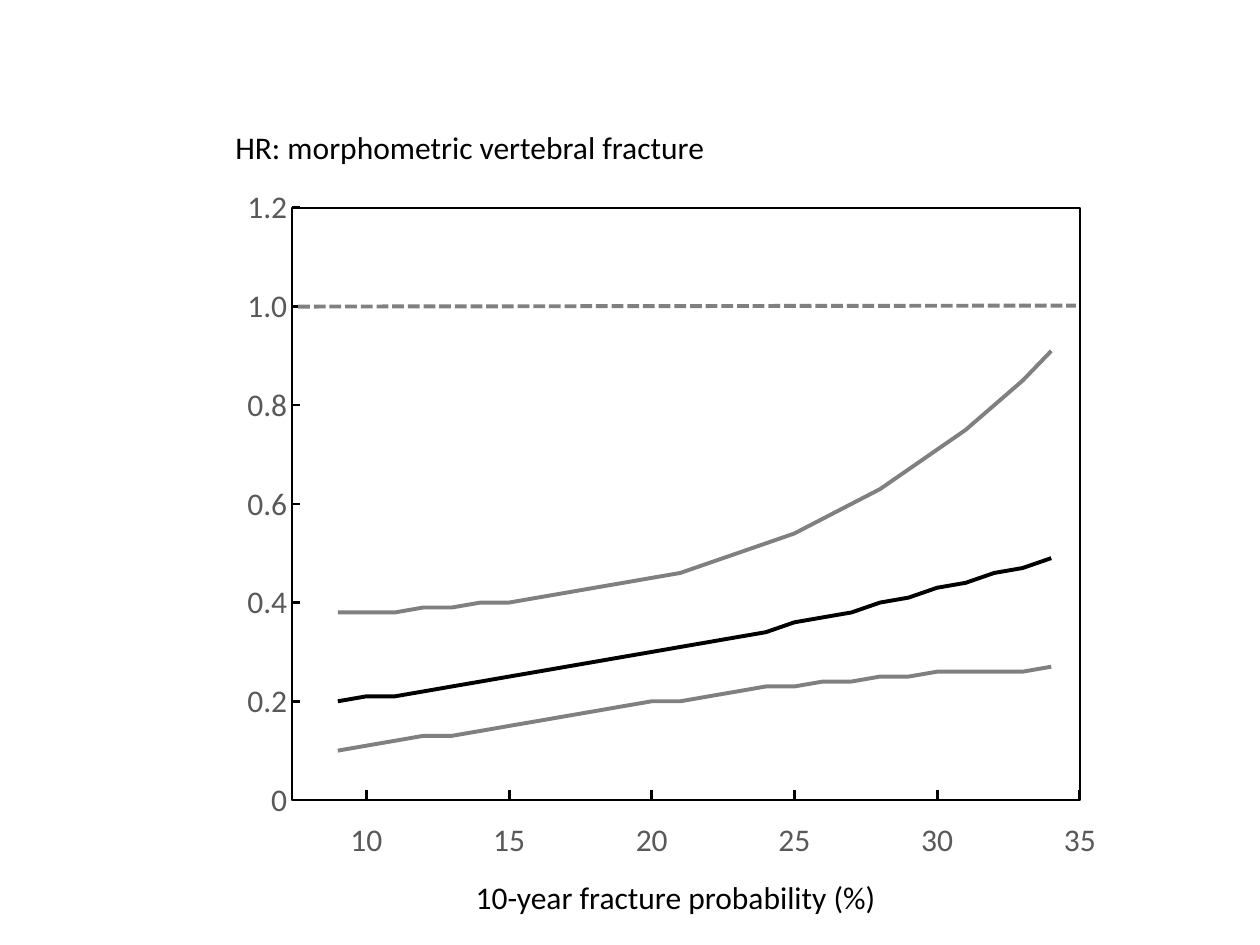
from dataclasses import dataclass

from pptx import Presentation
from pptx.chart.data import XyChartData
from pptx.dml.color import RGBColor as Rgb
from pptx.enum.chart import XL_CHART_TYPE as Kind, XL_MARKER_STYLE as Mark
from pptx.enum.chart import XL_TICK_LABEL_POSITION as Place, XL_TICK_MARK as Tick
from pptx.enum.dml import MSO_LINE as Dash
from pptx.enum.shapes import MSO_CONNECTOR as Link
from pptx.enum.text import MSO_ANCHOR as Anchor, MSO_AUTO_SIZE as Auto, PP_ALIGN as Align
from pptx.oxml import parse_xml
from pptx.oxml.ns import nsdecls, qn
from pptx.util import Cm, Pt


@dataclass(frozen=True)
class Theme:
    """Colours, font, type size and line widths."""
    ink: Rgb = Rgb(0, 0, 0)
    gray: Rgb = Rgb(0x80, 0x80, 0x80)
    label: Rgb = Rgb(0x59, 0x59, 0x59)
    font: str = "Calibri"
    size: Pt = Pt(18)
    edge: Pt = Pt(1.5)
    tick: Pt = Pt(1.75)
    curve: Pt = Pt(2.25)


@dataclass(frozen=True)
class Box:
    """A region in centimetres."""
    x: float
    y: float
    w: float
    h: float

    def cm(self):
        """Return the four lengths for python-pptx."""
        return Cm(self.x), Cm(self.y), Cm(self.w), Cm(self.h)


THEME = Theme()
X_MIN, X_MAX, Y_MAX = 7.4, 35, 1.2
FIRST = 9
CURVES = {
    "Hazard ratio": (THEME.ink, [
        .20, .21, .21, .22, .23, .24, .25, .26, .27, .28, .29, .30, .31,
        .32, .33, .34, .36, .37, .38, .40, .41, .43, .44, .46, .47, .49]),
    "Lower limit": (THEME.gray, [
        .10, .11, .12, .13, .13, .14, .15, .16, .17, .18, .19, .20, .20,
        .21, .22, .23, .23, .24, .24, .25, .25, .26, .26, .26, .26, .27]),
    "Upper limit": (THEME.gray, [
        .38, .38, .38, .39, .39, .40, .40, .41, .42, .43, .44, .45, .46,
        .48, .50, .52, .54, .57, .60, .63, .67, .71, .75, .80, .85, .91]),
}


def style(font, color):
    """Give a font the theme's face and size and a colour."""
    font.name, font.size, font.color.rgb = THEME.font, THEME.size, color


def write(shape, text, color, align, pad=True):
    """Put one formatted line of text into a shape."""
    frame = shape.text_frame
    frame.text = text
    frame.word_wrap = pad
    frame.auto_size = Auto.NONE
    frame.vertical_anchor = Anchor.TOP
    if not pad:
        frame.margin_left = frame.margin_right = 0
        frame.margin_top = frame.margin_bottom = 0
    line = frame.paragraphs[0]
    line.alignment = align
    style(line.runs[0].font, color)


def rule(slide, start, end, color, width, dash=None):
    """Draw a straight line between two points."""
    line = slide.shapes.add_connector(Link.STRAIGHT, *map(Cm, start + end))
    line.line.color.rgb, line.line.width = color, width
    if dash:
        line.line.dash_style = dash
    props = line._element.spPr
    props.append(parse_xml(f"<a:effectLst {nsdecls('a')}/>"))


def frame_plot(chart, outer, plot):
    """Fix the inner plot area and draw its border."""
    area = chart._chartSpace.chart.plotArea
    for old in area.findall(qn("c:layout")):
        area.remove(old)
    parts = {"x": (plot.x - outer.x) / outer.w, "y": (plot.y - outer.y) / outer.h,
             "w": plot.w / outer.w, "h": plot.h / outer.h}
    modes = "".join(f'<c:{k}Mode val="edge"/>' for k in "xy")
    sizes = "".join(f'<c:{k} val="{v:.5f}"/>' for k, v in parts.items())
    area.insert(0, parse_xml(
        f"<c:layout {nsdecls('c')}><c:manualLayout>"
        f'<c:layoutTarget val="inner"/>{modes}{sizes}'
        "</c:manualLayout></c:layout>"))
    area.append(parse_xml(
        f"<c:spPr {nsdecls('c', 'a')}><a:noFill/><a:ln w=\"{int(THEME.edge)}\">"
        f'<a:solidFill><a:srgbClr val="{THEME.ink}"/></a:solidFill>'
        "</a:ln></c:spPr>"))


def set_axis(axis, low, high, step):
    """Set the range and line of an axis."""
    axis.minimum_scale, axis.maximum_scale, axis.major_unit = low, high, step
    axis.has_major_gridlines = axis.has_title = False
    axis.minor_tick_mark = Tick.NONE
    axis.format.line.color.rgb = THEME.ink
    axis.format.line.width = THEME.edge


def draw_plot(slide, plot):
    """Add the curves and the vertical scale."""
    data = XyChartData()
    for name, (_, points) in CURVES.items():
        row = data.add_series(name)
        for x, y in enumerate(points, FIRST):
            row.add_data_point(x, y)
    outer = Box(plot.x - 1.7, plot.y - 1, plot.w + 2.3, plot.h + 1.6)
    chart = slide.shapes.add_chart(
        Kind.XY_SCATTER_LINES_NO_MARKERS, *outer.cm(), data).chart
    chart.has_legend = chart.has_title = False
    style(chart.font, THEME.label)
    chart.plots[0].vary_by_categories = False
    for row, (color, _) in zip(chart.plots[0].series, CURVES.values()):
        row.smooth = False
        row.marker.style = Mark.NONE
        row.format.line.color.rgb = color
        row.format.line.width = THEME.curve
    across, up = chart.category_axis, chart.value_axis
    set_axis(across, X_MIN, X_MAX, 5)
    across.major_tick_mark = Tick.NONE
    across.tick_label_position = Place.NONE
    set_axis(up, 0, Y_MAX, .2)
    up.major_tick_mark = Tick.INSIDE
    up.tick_labels.number_format = "0.0;-0.0;0"
    up.tick_labels.number_format_is_linked = False
    frame_plot(chart, outer, plot)


def draw_scale(slide, plot):
    """Add the probability ticks with their labels and the axis title."""
    base = plot.y + plot.h
    for mark in range(10, X_MAX + 1, 5):
        x = plot.x + plot.w * (mark - X_MIN) / (X_MAX - X_MIN)
        rule(slide, (x, base), (x, base - .2), THEME.ink, THEME.tick)
        spot = Box(x - .33, base + .4, .66, .77)
        write(slide.shapes.add_textbox(*spot.cm()), str(mark),
              THEME.label, Align.CENTER, pad=False)
    spot = Box(plot.x + 3.4, base + 1.45, 8.66, 1.02)
    write(slide.shapes.add_textbox(*spot.cm()),
          "10-year fracture probability (%)", THEME.ink, Align.CENTER)


def draw_level(slide, plot):
    """Add the dashed line where the ratio is one."""
    y = plot.y + plot.h * (1 - 1 / Y_MAX)
    rule(slide, (plot.x + .12, y), (plot.x + plot.w - .08, y - .02),
         THEME.gray, THEME.curve, Dash.SQUARE_DOT)


def draw_head(slide, plot):
    """Place the heading above the plot."""
    title = slide.shapes.title
    spot = Box(plot.x - 1.4, plot.y - 1.73, 10.9, 1.02)
    title.left, title.top, title.width, title.height = spot.cm()
    write(title, "HR: morphometric vertebral fracture", THEME.ink, Align.LEFT)


def main():
    """Build and save the slide."""
    deck = Presentation()
    deck.slide_width, deck.slide_height = Cm(25.4), Cm(19.05)
    slide = deck.slides.add_slide(deck.slide_layouts[5])
    plot = Box(5.89, 4.19, 15.88, 11.94)
    for draw in (draw_plot, draw_scale, draw_head, draw_level):
        draw(slide, plot)
    deck.save("out.pptx")


if __name__ == "__main__":
    main()
